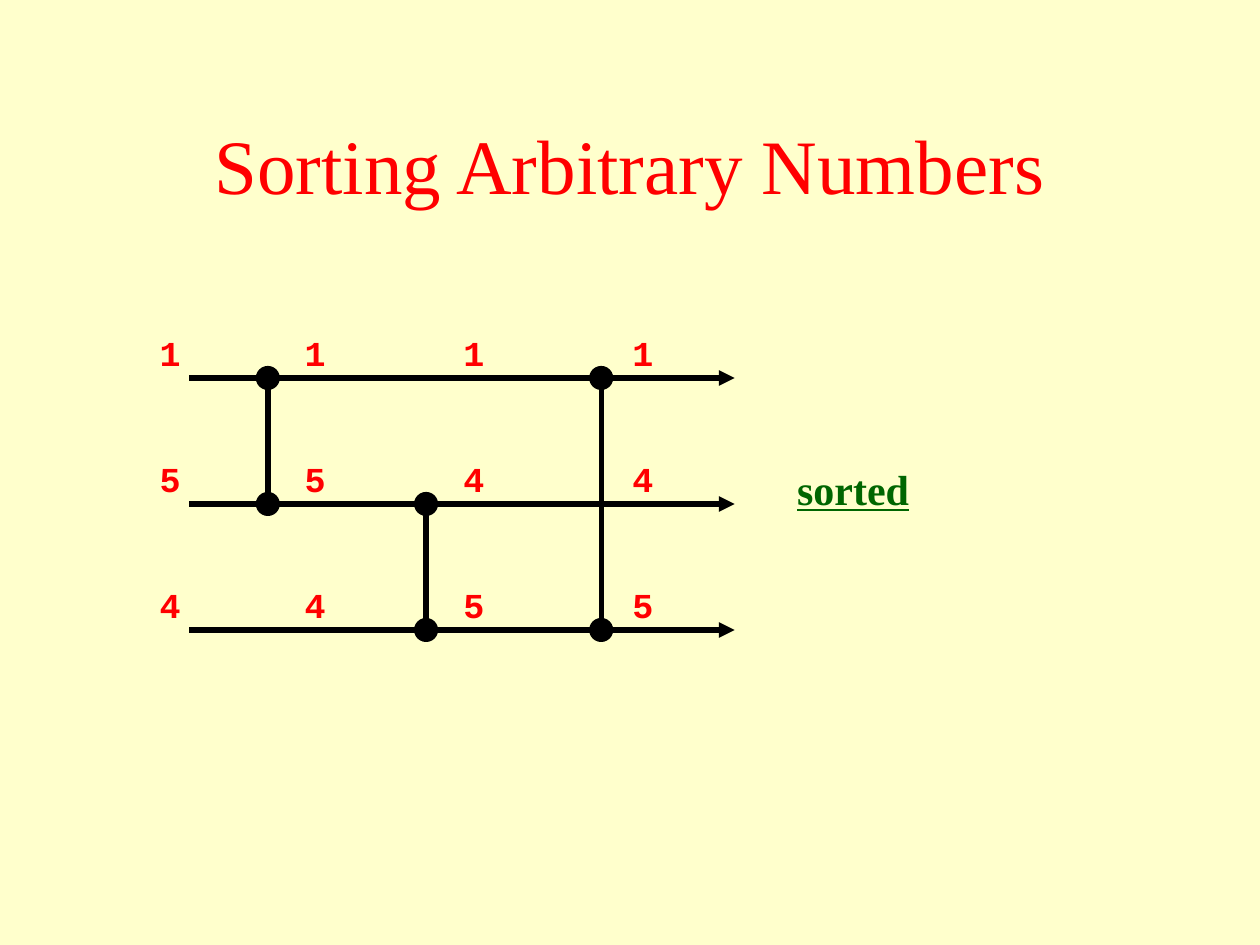
from lxml.etree import SubElement
from pptx import Presentation
from pptx.dml.color import RGBColor
from pptx.enum.shapes import MSO_CONNECTOR as Link, MSO_SHAPE as Shape
from pptx.enum.text import MSO_ANCHOR as Anchor, MSO_AUTO_SIZE as Fit, PP_ALIGN as Align
from pptx.oxml.ns import qn
from pptx.util import Cm, Pt

CREAM = RGBColor(0xFF, 0xFF, 0xCC)
RED = RGBColor(0xFF, 0x00, 0x00)
GREEN = RGBColor(0x00, 0x66, 0x00)
BLACK = RGBColor(0x00, 0x00, 0x00)
SERIF = "Times New Roman"
MONO = "Courier New"

WIRES = (7.62, 10.16, 12.7)
START, END = 3.81, 14.81
GATES = ((5.4, 0, 1), (8.59, 1, 2), (12.12, 0, 2))
STAGES = ((2.97, "154"), (5.89, "154"), (9.09, "145"), (12.5, "145"))
DOT = 0.46
RISE = 1.06


def add_run(para, text, font, size, color, bold=False, under=False):
    """Add one formatted run to a paragraph."""
    run = para.add_run()
    run.text = text
    face = run.font
    face.name, face.size = font, Pt(size)
    face.bold, face.underline = bold, under
    face.color.rgb = color


def add_title(slide, text):
    """Place and format the title."""
    title = slide.shapes.title
    title.left, title.top = Cm(1.9), Cm(1.7)
    title.width, title.height = Cm(21.6), Cm(3.18)
    frame = title.text_frame
    frame.vertical_anchor = Anchor.MIDDLE
    para = frame.paragraphs[0]
    para.alignment = Align.CENTER
    add_run(para, text, SERIF, 44, RED)


def add_label(shapes, text, x, y, w, h, font, size, color, under=False):
    """Add a bold, unwrapped label."""
    box = shapes.add_textbox(Cm(x), Cm(y), Cm(w), Cm(h))
    frame = box.text_frame
    frame.word_wrap = False
    frame.auto_size = Fit.SHAPE_TO_FIT_TEXT
    add_run(frame.paragraphs[0], text, font, size, color, True, under)


def add_line(shapes, x1, y1, x2, y2, arrow=False):
    """Add a thick black line, with an arrowhead if asked."""
    line = shapes.add_connector(Link.STRAIGHT, Cm(x1), Cm(y1), Cm(x2), Cm(y2))
    line.line.color.rgb = BLACK
    line.line.width = Pt(3)
    if arrow:
        SubElement(line.line._get_or_add_ln(), qn("a:tailEnd"), type="triangle")
    SubElement(line._element.spPr, qn("a:effectLst"))


def add_dot(shapes, x, y):
    """Add a black dot centred on a point."""
    dot = shapes.add_shape(Shape.OVAL, Cm(x - DOT / 2), Cm(y - DOT / 2), Cm(DOT), Cm(DOT))
    dot.shadow.inherit = False
    dot.fill.solid()
    dot.fill.fore_color.rgb = BLACK
    dot.line.color.rgb = BLACK
    dot.line.width = Pt(0.75)


def add_gate(shapes, x, top, low):
    """Join two wires with a comparator."""
    add_line(shapes, x, WIRES[top], x, WIRES[low])
    for row in (top, low):
        add_dot(shapes, x, WIRES[row])


def add_stage(shapes, x, digits):
    """Group the values that the wires carry at one stage."""
    group = shapes.add_group_shape()
    for digit, y in zip(digits, WIRES):
        add_label(group.shapes, digit, x, y - RISE, 0.94, 1.09, MONO, 20, RED)


def main():
    """Build the sorting network slide."""
    deck = Presentation()
    deck.slide_width, deck.slide_height = Cm(25.4), Cm(19.05)
    slide = deck.slides.add_slide(deck.slide_layouts[5])
    slide.background.fill.solid()
    slide.background.fill.fore_color.rgb = CREAM
    shapes = slide.shapes
    add_title(slide, "Sorting Arbitrary Numbers")
    for gate in GATES:
        add_gate(shapes, *gate)
    for stage in STAGES:
        add_stage(shapes, *stage)
    add_label(shapes, "sorted", 15.82, 9.22, 2.77, 1.27, SERIF, 24, GREEN, True)
    for y in WIRES:
        add_line(shapes, START, y, END, y, True)
    deck.save("out.pptx")


if __name__ == "__main__":
    main()
